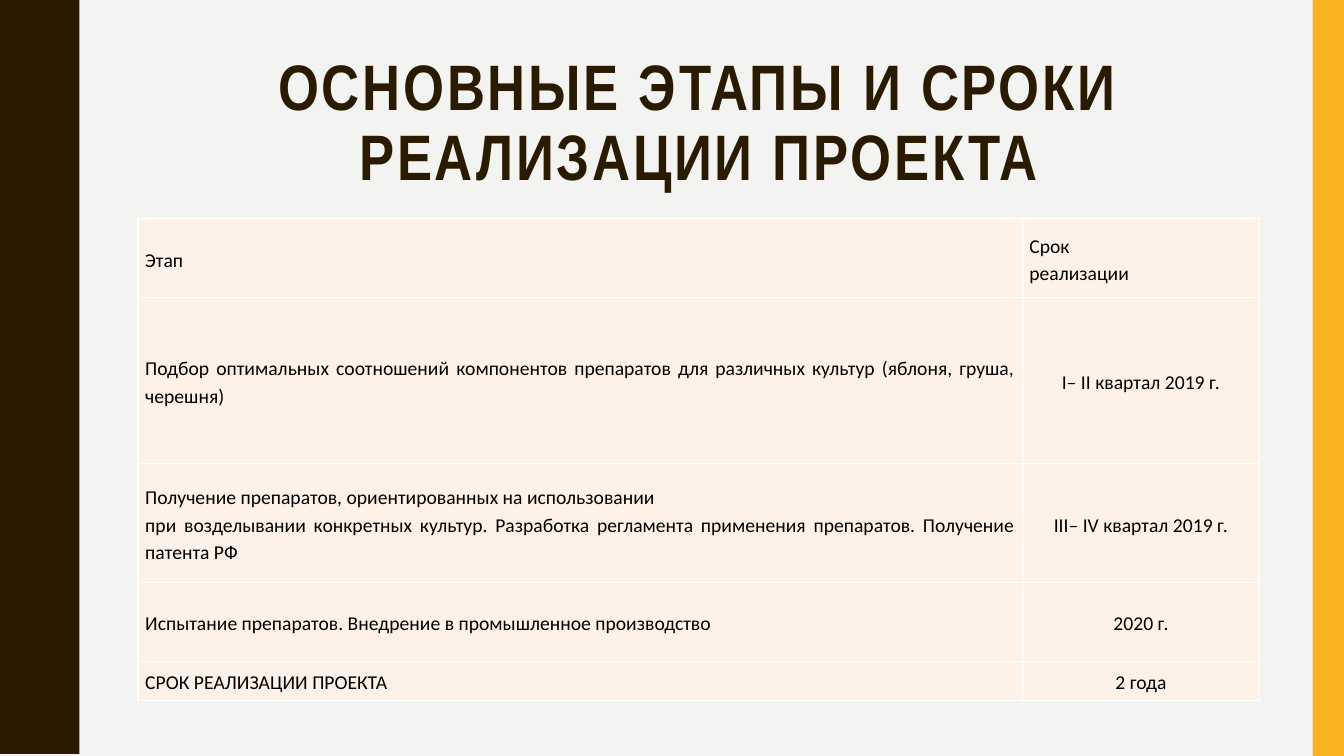
"""Builds the slide with the main stages and dates of the project."""
from lxml import etree
from pptx import Presentation
from pptx import util as u
from pptx.dml.color import RGBColor
from pptx.enum import shapes, text
from pptx.oxml.ns import qn

BACKGROUND, BROWN, YELLOW = "F3F3F2", "2A1A00", "F8B323"
CELL, WHITE, BLACK = "FEF2E8", "FFFFFF", "000000"
LEFT, CENTER, JUSTIFY = text.PP_ALIGN.LEFT, text.PP_ALIGN.CENTER, text.PP_ALIGN.JUSTIFY

TITLE = "ОСНОВНЫЕ ЭТАПЫ И СРОКИ РЕАЛИЗАЦИИ ПРОЕКТА"
STAGES = [
    (["Этап"], ["Срок", "реализации"]),
    (["Подбор оптимальных соотношений компонентов препаратов для различных культур "
      "(яблоня, груша, черешня)"], ["I– II квартал 2019 г."]),
    (["Получение препаратов, ориентированных на использовании ",
      "при возделывании конкретных культур. Разработка регламента применения "
      "препаратов. Получение патента РФ"], ["III– IV квартал 2019 г."]),
    (["Испытание препаратов. Внедрение в промышленное производство"], ["2020 г."]),
    (["СРОК РЕАЛИЗАЦИИ ПРОЕКТА"], ["2 года"]),
]
COLUMN_WIDTHS = [22.28, 5.99]
ROW_HEIGHTS = [1.98, 4.19, 3, 1.98, 0.99]
WIDTH, HEIGHT = 33.87, 19.05
MARGIN, CONTENT_WIDTH = 3.48, 28.27
WAVES = 5
RISE = [(1.98, 0), (1.98, 0.18), (2.01, 0.36), (2.03, 0.51), (2.06, 0.64), (2.11, 0.74),
        (2.16, 0.84), (2.21, 0.97), (2.26, 1.07), (2.31, 1.17), (2.36, 1.27),
        (2.41, 1.4), (2.44, 1.55), (2.46, 1.73), (2.46, 1.9)]


def color(value):
    return RGBColor.from_string(value)


def paint(shape, value):
    shape.fill.solid()
    shape.fill.fore_color.rgb = color(value)
    shape.line.fill.background()
    shape.shadow.inherit = False


def add_run(paragraph, content, font_name, size, value):
    run = paragraph.add_run()
    run.text = content
    run.font.name = font_name
    run.font.size = u.Pt(size)
    run.font.color.rgb = color(value)
    return run


def add_wave(slide):
    period = HEIGHT / WAVES
    fall = [(x, period - y) for x, y in reversed(RISE[1:])]
    edge = [(x, y + wave * period) for wave in range(WAVES) for x, y in RISE + fall]
    outline = edge + [(RISE[0][0], HEIGHT), (0, HEIGHT)]
    builder = slide.shapes.build_freeform(0, 0, scale=u.Cm(1))
    builder.add_line_segments(outline, close=True)
    paint(builder.convert_to_shape(), BROWN)


def add_title(slide):
    box = slide.shapes.add_textbox(u.Cm(MARGIN), u.Cm(1.07), u.Cm(CONTENT_WIDTH), u.Cm(4.14))
    frame = box.text_frame
    frame.word_wrap = True
    frame.vertical_anchor = text.MSO_ANCHOR.MIDDLE
    paragraph = frame.paragraphs[0]
    paragraph.alignment = CENTER
    paragraph.line_spacing = 0.9
    run = add_run(paragraph, TITLE, "Arial Narrow", 45.9, BROWN)
    run.font.bold = True
    run.font._element.set("spc", "200")


def add_borders(cell):
    properties = cell._tc.get_or_add_tcPr()
    for position, side in enumerate(("a:lnL", "a:lnR", "a:lnT", "a:lnB")):
        line = etree.Element(qn(side), w=str(u.Pt(1)))
        fill = etree.SubElement(line, qn("a:solidFill"))
        etree.SubElement(fill, qn("a:srgbClr"), val=WHITE)
        properties.insert(position, line)


def fill_cell(cell, lines, alignment):
    cell.fill.solid()
    cell.fill.fore_color.rgb = color(CELL)
    add_borders(cell)
    cell.vertical_anchor = text.MSO_ANCHOR.MIDDLE
    cell.margin_left = cell.margin_right = u.Cm(0.18)
    cell.margin_top, cell.margin_bottom = u.Cm(0.03), 0
    for index, line in enumerate(lines):
        frame = cell.text_frame
        paragraph = frame.add_paragraph() if index else frame.paragraphs[0]
        paragraph.alignment = alignment
        paragraph.line_spacing = 1.15
        add_run(paragraph, line, "Calibri", 14, BLACK)


def add_stages(slide):
    table = slide.shapes.add_table(
        len(STAGES), len(COLUMN_WIDTHS), u.Cm(MARGIN), u.Cm(5.51),
        u.Cm(CONTENT_WIDTH), u.Cm(sum(ROW_HEIGHTS))).table
    table.first_row = table.horz_banding = False
    for column, width in zip(table.columns, COLUMN_WIDTHS):
        column.width = u.Cm(width)
    for row, height in zip(table.rows, ROW_HEIGHTS):
        row.height = u.Cm(height)
    for row, stage in enumerate(STAGES):
        alignments = (JUSTIFY, CENTER) if row else (LEFT, LEFT)
        for column, (lines, alignment) in enumerate(zip(stage, alignments)):
            fill_cell(table.cell(row, column), lines, alignment)


def main():
    presentation = Presentation()
    presentation.slide_width, presentation.slide_height = u.Cm(WIDTH), u.Cm(HEIGHT)
    slide = presentation.slides.add_slide(presentation.slide_layouts[6])
    slide.background.fill.solid()
    slide.background.fill.fore_color.rgb = color(BACKGROUND)
    add_wave(slide)
    stripe_width = 0.79
    stripe = slide.shapes.add_shape(
        shapes.MSO_SHAPE.RECTANGLE, u.Cm(WIDTH - stripe_width), 0,
        u.Cm(stripe_width), u.Cm(HEIGHT))
    paint(stripe, YELLOW)
    add_title(slide)
    add_stages(slide)
    presentation.save("out.pptx")


if __name__ == "__main__":
    main()
